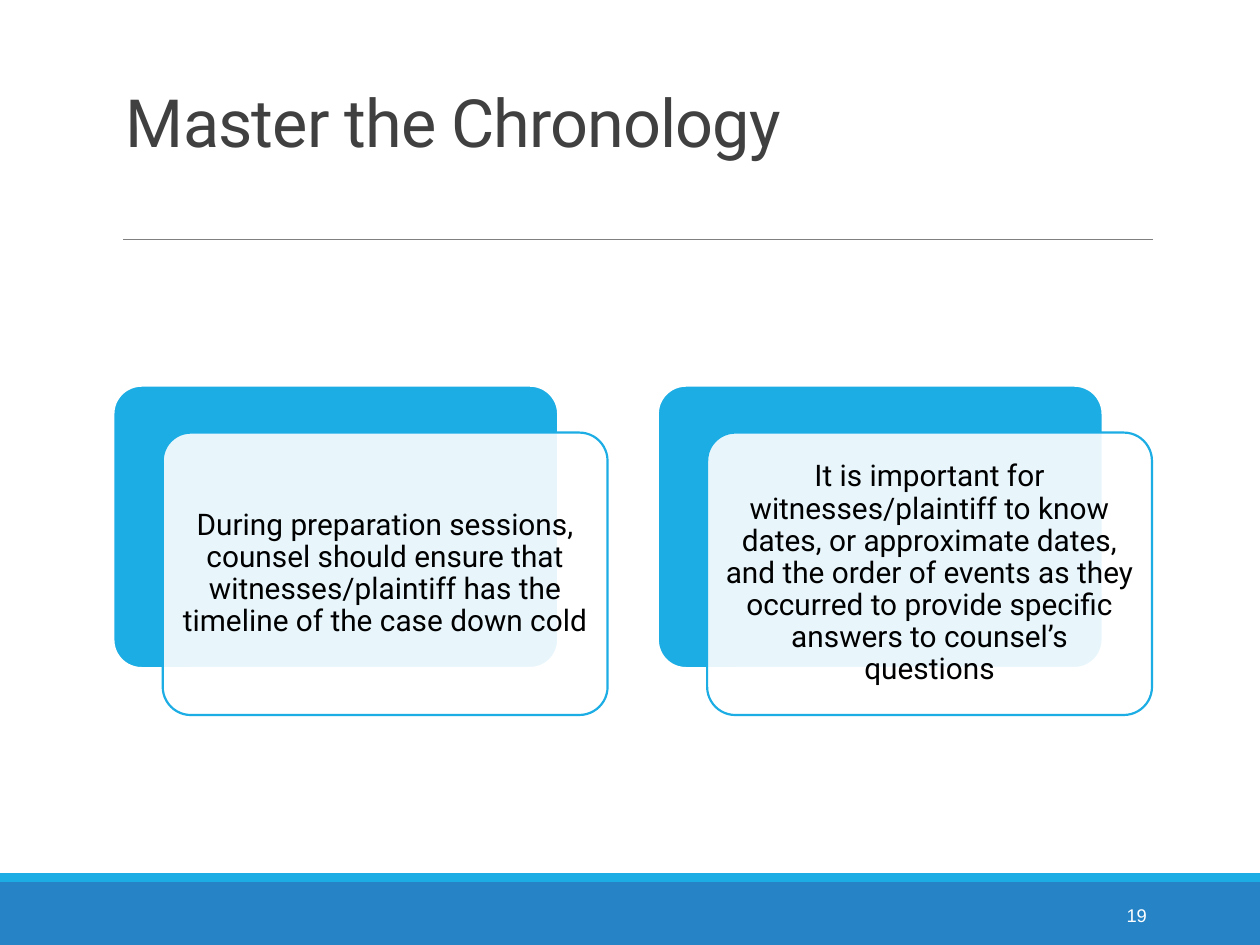
from dataclasses import dataclass

import pptx
import pptx.dml.color
import pptx.enum.shapes
import pptx.enum.text
import pptx.oxml.ns
import pptx.util
from lxml import etree

Pt = pptx.util.Pt
Align = pptx.enum.text.PP_ALIGN
Anchor = pptx.enum.text.MSO_ANCHOR
Preset = pptx.enum.shapes.MSO_SHAPE


@dataclass(frozen=True)
class Theme:
    sky: str = "1CADE4"
    blue: str = "2683C6"
    white: str = "FFFFFF"
    black: str = "000000"
    heading: str = "404040"
    rule: str = "808080"
    font: str = "Roboto"
    number_font: str = "Arial"
    title_size: float = 38
    card_size: float = 17
    number_size: float = 10.5
    card_line: float = 1.25
    rule_line: float = 0.5


@dataclass(frozen=True)
class Area:
    """A rectangle in points."""
    left: float
    top: float
    width: float
    height: float

    def moved(self, across: float, down: float = 0) -> "Area":
        return Area(self.left + across, self.top + down, self.width, self.height)

    def inset(self, margin: float) -> "Area":
        return Area(self.left + margin, self.top + margin,
                    self.width - 2 * margin, self.height - 2 * margin)

    def lengths(self) -> tuple:
        return Pt(self.left), Pt(self.top), Pt(self.width), Pt(self.height)


@dataclass(frozen=True)
class TextStyle:
    font: str
    size: float
    color: str
    align: Align
    anchor: Anchor
    line_spacing: float = 1
    tracking: float = 0
    margins: tuple = (7.2, 3.6)


THEME = Theme()
TITLE = TextStyle(THEME.font, THEME.title_size, THEME.heading, Align.LEFT,
                  Anchor.BOTTOM, line_spacing=0.85, tracking=-0.5)
CARD_TEXT = TextStyle(THEME.font, THEME.card_size, THEME.black, Align.CENTER,
                      Anchor.MIDDLE, line_spacing=0.9, margins=(5, 5))
NUMBER = TextStyle(THEME.number_font, THEME.number_size, THEME.white,
                   Align.RIGHT, Anchor.MIDDLE)

FIRST_CARD = Area(64.8, 220.4, 254.2, 161.4)
CARD_STEP = 311.1
FRONT_OFFSET = (28.2, 26.8)
CARD_PADDING = 4.7
CARDS = (
    "During preparation sessions, counsel should ensure that "
    "witnesses/plaintiff has the timeline of the case down cold",
    "It is important for witnesses/plaintiff to know dates, or approximate "
    "dates, and the order of events as they occurred to provide specific "
    "answers to counsel’s questions",
)


def rgb(color: str) -> pptx.dml.color.RGBColor:
    return pptx.dml.color.RGBColor.from_string(color)


def add_panel(page, preset: Preset, area: Area, fill: str, line: str = "",
              opacity: int = 100) -> None:
    panel = page.shapes.add_shape(preset, *area.lengths())
    panel.shadow.inherit = False
    panel.fill.solid()
    panel.fill.fore_color.rgb = rgb(fill)
    if opacity < 100:
        color = panel.fill._xPr.find(".//" + pptx.oxml.ns.qn("a:srgbClr"))
        etree.SubElement(color, pptx.oxml.ns.qn("a:alpha"), val=str(opacity * 1000))
    if line:
        panel.line.color.rgb = rgb(line)
        panel.line.width = Pt(THEME.card_line)
    else:
        panel.line.fill.background()
    if preset == Preset.ROUNDED_RECTANGLE:
        panel.adjustments[0] = 0.1


def add_text(page, area: Area, text: str, style: TextStyle) -> None:
    box = page.shapes.add_textbox(*area.lengths())
    frame = box.text_frame
    frame.word_wrap = True
    frame.vertical_anchor = style.anchor
    frame.margin_left = frame.margin_right = Pt(style.margins[0])
    frame.margin_top = frame.margin_bottom = Pt(style.margins[1])
    para = frame.paragraphs[0]
    para.alignment = style.align
    para.line_spacing = style.line_spacing
    span = para.add_run()
    span.text = text
    span.font.name = style.font
    span.font.size = Pt(style.size)
    span.font.color.rgb = rgb(style.color)
    if style.tracking:
        span.font._element.set("spc", str(round(style.tracking * 100)))


def add_rule(page, left: float, right: float, height: float) -> None:
    rule = page.shapes.add_connector(pptx.enum.shapes.MSO_CONNECTOR.STRAIGHT,
                                     Pt(left), Pt(height), Pt(right), Pt(height))
    rule.line.color.rgb = rgb(THEME.rule)
    rule.line.width = Pt(THEME.rule_line)
    etree.SubElement(rule._element.spPr, pptx.oxml.ns.qn("a:effectLst"))


def add_card(page, back: Area, text: str) -> None:
    """Draw a solid back panel, a translucent front panel and its text."""
    front = back.moved(*FRONT_OFFSET)
    add_panel(page, Preset.ROUNDED_RECTANGLE, back, THEME.sky, THEME.white)
    add_panel(page, Preset.ROUNDED_RECTANGLE, front, THEME.white, THEME.sky, opacity=90)
    add_text(page, front.inset(CARD_PADDING), text, CARD_TEXT)


def main() -> None:
    deck = pptx.Presentation()
    deck.slide_width, deck.slide_height = Pt(720), Pt(540)
    page = deck.slides.add_slide(deck.slide_layouts[6])

    add_panel(page, Preset.RECTANGLE, Area(0, 504, 720, 36), THEME.blue)
    add_panel(page, Preset.RECTANGLE, Area(0, 499, 720, 5), THEME.sky)
    add_rule(page, 70.4, 658.8, 136.8)
    add_text(page, Area(64.8, 22.3, 594, 73.4), "Master the Chronology", TITLE)
    add_text(page, Area(584.6, 508.5, 77.8, 28.8), "19", NUMBER)
    for index, text in enumerate(CARDS):
        add_card(page, FIRST_CARD.moved(index * CARD_STEP), text)

    deck.save("out.pptx")


if __name__ == "__main__":
    main()
